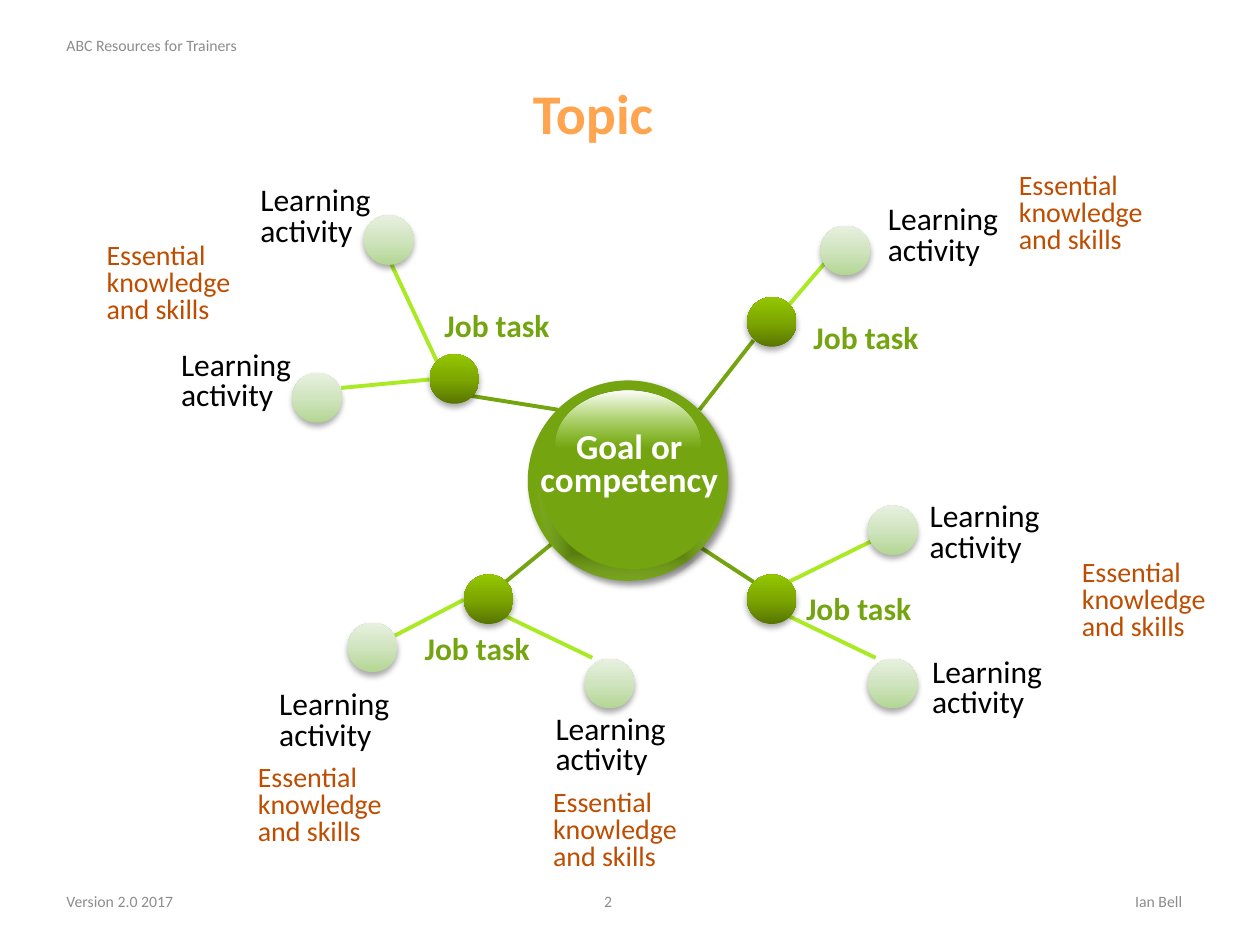
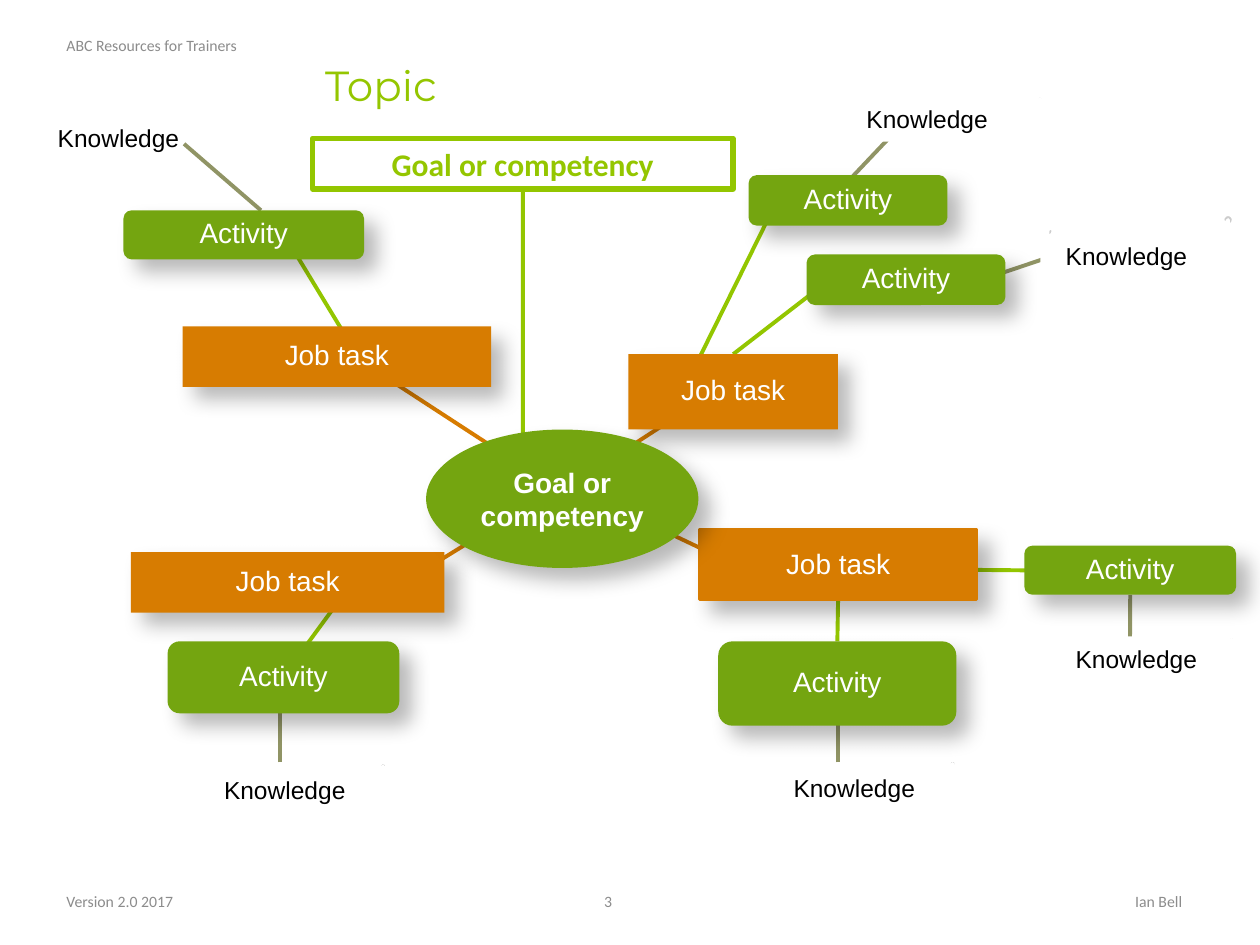
import pptx
import pptx.dml.color
import pptx.enum.shapes
import pptx.enum.text
import pptx.oxml
import pptx.oxml.ns
import pptx.util

Cm = pptx.util.Cm
Pt = pptx.util.Pt
SHAPE = pptx.enum.shapes.MSO_SHAPE
ALIGN = pptx.enum.text.PP_ALIGN
ANCHOR = pptx.enum.text.MSO_ANCHOR

COLOURS = {
    "green": "74A510", "lime": "93C600", "bright": "AAEA25", "heading": "94C600",
    "orange": "D77C01", "peach": "FFA44F", "rust": "BF4D00", "olive": "909465",
    "white": "FFFFFF", "black": "000000", "grey": "8C8C8C",
}
# Gradient stops: position, colour, opacity (all in percent)
TASK_STOPS = [(0, "587500", 100), (50, "7DA700", 100), (100, "94C600", 100)]
ACTIVITY_STOPS = [(0, "B3D693", 100), (50, "D0E4BF", 100), (100, "E8F1E0", 100)]
GLOSS_STOPS = [(0, "FFFFFF", 100), (54, "D5FFA2", 0)]
SHADE_STOPS = [(24, "000000", 24), (100, "FFFFFF", 0)]
UPWARD = '<a:lin ang="16200000" scaled="0"/>'
DOWNWARD = '<a:lin ang="5400000" scaled="0"/>'
FROM_CENTRE = ('<a:path path="shape"><a:fillToRect l="50000" t="50000" '
               'r="50000" b="50000"/></a:path>')
# Shadows: opacity (percent), blur and distance (points), direction (degrees)
BALL_SHADOW = (32, 3.5, 2.2, 90)
HUB_SHADOW = (43, 4, 3, 45)
BOX_SHADOW = (28, 11.8, 10, 45)

CENTRED = {"alignment": ALIGN.CENTER}
LABEL = {"name": "Calibri", "size": Pt(18)}
TASK_LABEL = {"name": "Calibri", "size": Pt(18), "bold": True}
SKILL_LABEL = {"name": "Calibri", "size": Pt(16)}
FOOTER = {"name": "Calibri", "size": Pt(9)}
BOX_FONT = {"name": "Arial", "size": Pt(16)}
GOAL_FONT = {"name": "Arial", "size": Pt(16), "bold": True}
KNOWLEDGE_FONT = {"name": "Arial", "size": Pt(14)}


def rgb(colour):
    return pptx.dml.color.RGBColor.from_string(COLOURS[colour])


def apply(target, values):
    for name, value in values.items():
        setattr(target, name, value)


def lengths(numbers):
    return [Cm(number) for number in numbers]


def xml(text):
    namespace = pptx.oxml.ns.nsdecls("a")
    return pptx.oxml.parse_xml(text.replace(">", f" {namespace}>", 1))


class Deck:
    """Holds the presentation, its shared style and the current slide."""

    def __init__(self):
        self.presentation = pptx.Presentation()
        self.presentation.slide_width = Cm(25.4)
        self.presentation.slide_height = Cm(19.05)
        self.slide = None

    def new_slide(self, number):
        layout = self.presentation.slide_layouts[5]
        self.slide = self.presentation.slides.add_slide(layout)
        footers = [
            ("ABC Resources for Trainers", (1.09, 0.41, 8.2, 1.02), ALIGN.LEFT),
            ("Version 2.0 2017", (1.09, 17.65, 8.2, 1.02), ALIGN.LEFT),
            (str(number), (9.3, 17.65, 5.92, 1.02), ALIGN.CENTER),
            ("Ian Bell", (16.69, 17.65, 7.39, 1.02), ALIGN.RIGHT),
        ]
        for text, box, alignment in footers:
            self.text(text, box, FOOTER, "grey", {"alignment": alignment}, ANCHOR.MIDDLE)

    def title(self, text, box, font, colour, anchor):
        title = self.slide.shapes.title
        apply(title, dict(zip(("left", "top", "width", "height"), lengths(box))))
        title.text_frame.auto_size = pptx.enum.text.MSO_AUTO_SIZE.NONE
        self.fill_text(title, text, font, colour, {"alignment": ALIGN.LEFT}, anchor)

    def fill_text(self, shape, text, font, colour, paragraph_format, anchor):
        frame = shape.text_frame
        frame.word_wrap = True
        frame.vertical_anchor = anchor
        frame.text = text
        for paragraph in frame.paragraphs:
            apply(paragraph, paragraph_format)
            for run in paragraph.runs:
                apply(run.font, font)
                run.font.color.rgb = rgb(colour)

    def text(self, text, box, font, colour, paragraph_format, anchor=ANCHOR.TOP):
        shape = self.slide.shapes.add_textbox(*lengths(box))
        self.fill_text(shape, text, font, colour, paragraph_format, anchor)

    def shape(self, kind, box, fill=None, line=None, width=2, shadow=None):
        shape = self.slide.shapes.add_shape(kind, *lengths(box))
        shape.shadow.inherit = False
        if fill:
            shape.fill.solid()
            shape.fill.fore_color.rgb = rgb(fill)
        else:
            shape.fill.background()
        if line:
            shape.line.color.rgb = rgb(line)
            shape.line.width = Pt(width)
        else:
            shape.line.fill.background()
        if shadow:
            opacity, blur, distance, direction = shadow
            effects = shape.element.spPr.find(pptx.oxml.ns.qn("a:effectLst"))
            effects.append(xml(
                f'<a:outerShdw blurRad="{Pt(blur)}" dist="{Pt(distance)}" '
                f'dir="{direction * 60000}" algn="ctr" rotWithShape="0">'
                f'<a:srgbClr val="{COLOURS["black"]}">'
                f'<a:alpha val="{opacity * 1000}"/></a:srgbClr></a:outerShdw>'))
        return shape

    def gradient_shape(self, kind, box, stops, course, shadow=None):
        shape = self.shape(kind, box, shadow=shadow)
        stop_xml = "".join(
            f'<a:gs pos="{position * 1000}"><a:srgbClr val="{colour}">'
            f'<a:alpha val="{opacity * 1000}"/></a:srgbClr></a:gs>'
            for position, colour, opacity in stops)
        properties = shape.element.spPr
        properties.replace(
            properties.find(pptx.oxml.ns.qn("a:noFill")),
            xml(f'<a:gradFill rotWithShape="1"><a:gsLst>{stop_xml}</a:gsLst>'
                f'{course}</a:gradFill>'))
        return shape

    def box(self, kind, text, box, fill, font=BOX_FONT, spacing=0.9, line=None):
        shape = self.shape(kind, box, fill, line, shadow=BOX_SHADOW)
        self.fill_text(shape, text, font, "white",
                       {"alignment": ALIGN.CENTER, "line_spacing": spacing}, ANCHOR.MIDDLE)
        return shape

    def connector(self, ends, colour):
        straight = pptx.enum.shapes.MSO_CONNECTOR.STRAIGHT
        connector = self.slide.shapes.add_connector(straight, *lengths(ends))
        connector.line.color.rgb = rgb(colour)
        connector.line.width = Pt(2.25)
        connector.element.spPr.append(xml("<a:effectLst></a:effectLst>"))
        return connector


def build_ball_map(deck):
    deck.new_slide(2)
    deck.title("Topic", (10.49, 1.47, 3.15, 1.57),
               {"name": "Calibri", "size": Pt(32), "bold": True}, "peach", ANCHOR.MIDDLE)

    hub_to_task = [
        (14.1, 8.26, 15.19, 6.86), (14.1, 11.02, 15.19, 11.73),
        (11.2, 10.9, 10.19, 11.73), (11.25, 8.26, 9.5, 7.98),
    ]
    task_to_activity = [
        (15.9, 6.15, 16.69, 5.23), (15.9, 11.73, 17.65, 10.87),
        (15.9, 12.42, 17.65, 13.26), (9.35, 12.09, 7.16, 13.23),
        (10.19, 12.42, 11.94, 13.26), (8.81, 7.29, 7.82, 5.18),
        (8.66, 7.65, 6.88, 7.82),
    ]
    for colour, connectors in (("green", hub_to_task), ("bright", task_to_activity)):
        for ends in connectors:
            deck.connector(ends, colour)

    task_balls = [(15.06, 5.99), (15.06, 11.58), (9.35, 11.58), (8.66, 7.14)]
    activity_balls = [(16.54, 4.55), (17.5, 10.19), (17.5, 13.28), (7.01, 12.55),
                      (11.79, 13.28), (7.34, 4.34), (5.89, 7.52)]
    for stops, balls in ((TASK_STOPS, task_balls), (ACTIVITY_STOPS, activity_balls)):
        for position in balls:
            deck.gradient_shape(SHAPE.OVAL, (*position, 1, 1), stops, UPWARD, BALL_SHADOW)

    deck.shape(SHAPE.OVAL, (10.64, 7.67, 4.04, 4.04), "green", shadow=HUB_SHADOW)
    deck.gradient_shape(SHAPE.OVAL, (11.2, 7.87, 2.92, 2.16), GLOSS_STOPS, DOWNWARD)
    deck.text("Goal or\ncompetency", (10.49, 8.59, 4.39, 1.65),
              {"name": "Calibri", "size": Pt(20), "bold": True}, "white",
              {"alignment": ALIGN.CENTER, "line_spacing": 0.8})
    shade = deck.gradient_shape(SHAPE.MOON, (11.68, 9.02, 1.88, 3.71),
                                SHADE_STOPS, FROM_CENTRE)
    shade.rotation = 275.9
    shade.adjustments[0] = 0.19

    task_labels = [(8.71, 6.2), (16.15, 6.43), (16, 11.89), (8.31, 12.7)]
    activity_labels = [(3.4, 6.93), (5, 3.61), (17.65, 3.99), (10.95, 14.27),
                       (18.49, 9.98), (18.54, 13.11), (5.38, 13.77)]
    skill_labels = [(1.9, 4.8), (20.29, 3.38), (21.56, 11.18), (10.9, 15.82),
                    (4.95, 15.32)]
    label_kinds = [
        ("Job task", task_labels, (3, 0.89), TASK_LABEL, "green", ANCHOR.TOP),
        ("Learning activity", activity_labels, (3.1, 1.57), LABEL, "black", ANCHOR.MIDDLE),
        ("Essential knowledge and skills", skill_labels, (3.2, 1.9), SKILL_LABEL, "rust",
         ANCHOR.TOP),
    ]
    for text, positions, size, font, colour, anchor in label_kinds:
        for position in positions:
            deck.text(text, (*position, *size), font, colour, {"line_spacing": 0.8}, anchor)


def build_box_map(deck):
    deck.new_slide(3)
    deck.title("Topic", (6.3, 1.07, 16.46, 1.3),
               {"name": "Montserrat", "size": Pt(24)}, "heading", ANCHOR.TOP)

    goal_line = deck.connector((10.54, 3.81, 10.54, 9.73), "lime")
    upper_right_line = deck.connector((16.36, 5.92, 14.78, 7.14), "lime")
    lower_right_line = deck.connector((16.89, 12.09, 16.89, 12.93), "lime")
    far_right_line = deck.connector((22.78, 12.83, 22.78, 11.99), "olive")
    free_lines = {
        "lime": [(6.91, 6.68, 5.54, 4.42), (16.46, 11.46, 22.1, 11.51),
                 (7.39, 11.35, 5.99, 13.26), (15.44, 4.5, 14.1, 7.21)],
        "olive": [(20.09, 5.54, 21.01, 5.23), (16.92, 3.84, 18.01, 2.69),
                  (5.26, 4.24, 3.71, 2.9), (16.89, 15.37, 16.89, 14.38),
                  (5.64, 15.37, 5.64, 14.38)],
        "orange": [(7.57, 7.47, 10.41, 9.32), (7.87, 11.91, 9.93, 10.64),
                   (14.48, 7.85, 12.6, 9.07), (12.88, 10.46, 14.71, 11.33)],
    }
    for colour, connectors in free_lines.items():
        for ends in connectors:
            deck.connector(ends, colour)

    knowledge_scrolls = [
        ((0.69, 1.93, 6.22, 1.8), None, ALIGN.LEFT),
        ((21.01, 4.32, 3.86, 1.8), "white", ALIGN.LEFT),
        ((17.09, 1.93, 3.94, 1.02), "white", ALIGN.LEFT),
        ((21.31, 12.83, 3.58, 0.99), "white", ALIGN.LEFT),
        ((15.09, 15.32, 4.19, 1.22), "white", ALIGN.CENTER),
        ((3.61, 15.37, 4.19, 1.22), "white", ALIGN.CENTER),
    ]
    for box, colour, alignment in knowledge_scrolls:
        scroll = deck.shape(SHAPE.HORIZONTAL_SCROLL, box, colour, colour)
        deck.fill_text(scroll, "Knowledge", KNOWLEDGE_FONT, "black",
                       {"alignment": alignment, "line_spacing": 0.8}, ANCHOR.MIDDLE)

    for box in ((3.68, 6.58, 6.22, 1.22), (2.64, 11.13, 6.32, 1.22)):
        deck.box(SHAPE.RECTANGLE, "Job task", box, "orange")
    upper_right_task = deck.box(SHAPE.RECTANGLE, "Job task",
                                (12.67, 7.14, 4.22, 1.52), "orange")
    lower_right_task = deck.box(SHAPE.RECTANGLE, "Job task",
                                (14.1, 10.69, 5.59, 1.4), "orange", line="orange")

    activity_boxes = [
        (2.49, 4.24, 4.85, 0.99), (3.38, 12.93, 4.67, 1.45),
        (16.26, 5.13, 4.01, 1.02), (15.09, 3.53, 4.01, 1.02),
        (14.48, 12.93, 4.8, 1.7), (20.65, 11, 4.27, 0.99),
    ]
    activities = [deck.box(SHAPE.ROUNDED_RECTANGLE, "Activity", box, "green")
                  for box in activity_boxes]
    lower_right_activity, far_right_activity = activities[-2:]

    goal_box = deck.shape(SHAPE.RECTANGLE, (6.3, 2.79, 8.48, 1.02), "white", "lime", 3)
    deck.fill_text(goal_box, "Goal or competency", TASK_LABEL, "heading", CENTRED, ANCHOR.TOP)
    deck.box(SHAPE.OVAL, "Goal or competency", (8.59, 8.66, 5.49, 2.79), "green",
             GOAL_FONT, spacing=1.0)

    goal_line.begin_connect(goal_box, 2)
    upper_right_line.end_connect(upper_right_task, 0)
    lower_right_line.begin_connect(lower_right_task, 2)
    lower_right_line.end_connect(lower_right_activity, 0)
    far_right_line.end_connect(far_right_activity, 2)


def main():
    deck = Deck()
    build_ball_map(deck)
    build_box_map(deck)
    deck.presentation.save("out.pptx")


if __name__ == "__main__":
    main()
